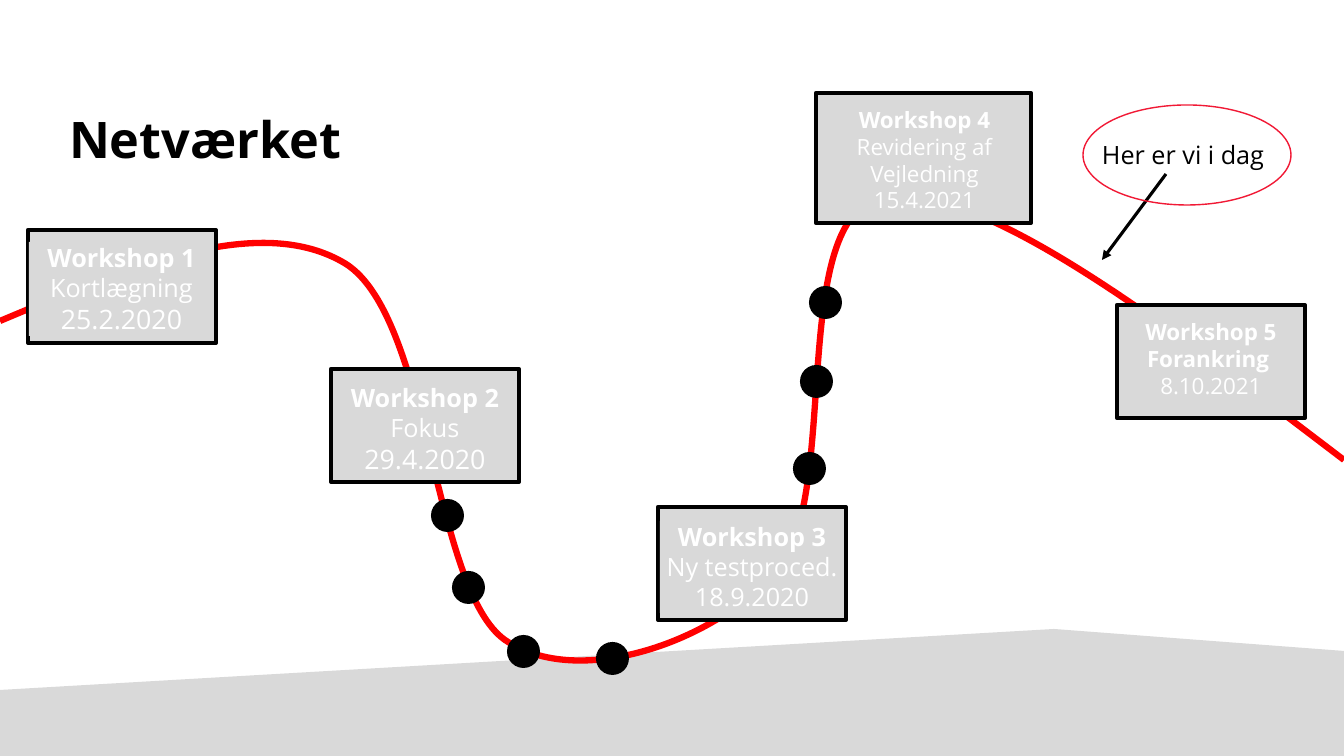
from lxml.etree import SubElement
from pptx import Presentation
from pptx.dml.color import RGBColor
from pptx.enum.shapes import MSO_CONNECTOR, MSO_SHAPE as SHAPE
from pptx.enum.text import MSO_ANCHOR, MSO_AUTO_SIZE, PP_ALIGN as ALIGN
from pptx.oxml.ns import qn
from pptx.util import Emu, Pt

PX = 12192000 / 1344
BLACK, WHITE, GREY, RED, ROSE = "000000", "FFFFFF", "D9D9D9", "FF0000", "F11935"


def px(length):
    return Emu(round(length * PX))


def paint(target, fill=None, line=None, width=0):
    """Colour a shape's fill and line and remove its shadow."""
    for part, colour in ((target.fill, fill), (target.line.fill, line)):
        if colour:
            part.solid()
            part.fore_color.rgb = RGBColor.from_string(colour)
        else:
            part.background()
    if line:
        target.line.width = Pt(width)
    target.shadow.inherit = False


deck = Presentation()
deck.slide_width, deck.slide_height = px(1344), px(756)
slide = deck.slides.add_slide(deck.slide_layouts[5])
shapes = slide.shapes

# Ground
ground_points = [(1054, 629), (1344, 651), (1344, 756), (0, 756)]
ground = shapes.build_freeform(0, px(690), scale=1)
ground.add_line_segments([(px(x), px(y)) for x, y in ground_points], close=True)
paint(ground.convert_to_shape(), GREY)

# Red route: the frame of the outline first, then its Bézier curves
ROUTE_TOP, ROUTE_BOTTOM = 196, 660
segments = [
    ("moveTo", [(0, 321)]),
    ("cubicBezTo", [(131, 266), (261, 212), (346, 264)]),
    ("cubicBezTo", [(430, 318), (433, 589), (505, 640)]),
    ("cubicBezTo", [(578, 690), (716, 642), (778, 569)]),
    ("cubicBezTo", [(841, 495), (787, 216), (882, 198)]),
    ("cubicBezTo", [(977, 179), (1160, 320), (1344, 460)]),
]
frame_outline = shapes.build_freeform(0, px(ROUTE_TOP), scale=1)
frame_outline.add_line_segments([(px(1344), px(ROUTE_BOTTOM))], close=False)
route = frame_outline.convert_to_shape()
outline = next(route._element.iter(qn("a:path")))
for straight in list(outline):
    outline.remove(straight)
for kind, points in segments:
    segment = SubElement(outline, qn("a:" + kind))
    for x, y in points:
        SubElement(segment, qn("a:pt"), x=str(px(x)), y=str(px(y - ROUTE_TOP)))
paint(route, line=RED, width=4.5)

# Title and note; lines are (text, size, bold)
title = shapes.title
title.left, title.top, title.width, title.height = map(px, (69, 108, 797, 61))
note = shapes.add_textbox(*map(px, (1102, 139, 172, 30)))
texts = [
    (title, BLACK, ALIGN.LEFT, [("Netværket", 36, True)]),
    (note, BLACK, ALIGN.LEFT, [("Her er vi i dag", 18, False)]),
]

# Workshops: framed box, text panel, lines
workshops = [
    ((28, 230, 188, 113), (29, 242, 185, 94),
     [("Workshop 1", 18, True), ("Kortlægning", 18, False), ("25.2.2020", 19.1, False)]),
    ((331, 369, 188, 113), (334, 382, 182, 94),
     [("Workshop 2", 18, True), ("Fokus", 18, False), ("29.4.2020", 19.1, False)]),
    ((658, 507, 188, 113), (660, 521, 184, 92),
     [("Workshop 3", 18, True), ("Ny testproced.", 18, False), ("18.9.2020", 18, False)]),
    ((816, 93, 215, 130), (822, 106, 205, 100),
     [("Workshop 4", 16, True), ("Revidering af", 16, False),
      ("Vejledning", 16, False), ("15.4.2021", 16, False)]),
    ((1117, 305, 188, 113), (1120, 318, 182, 82),
     [("Workshop 5", 16, True), ("Forankring ", 16, True), ("8.10.2021", 16, False)]),
]
for box, panel, lines in workshops:
    workshop = shapes.add_group_shape().shapes
    paint(workshop.add_shape(SHAPE.RECTANGLE, *map(px, box)), GREY, BLACK, 3)
    label = workshop.add_shape(SHAPE.RECTANGLE, *map(px, panel))
    paint(label, GREY)
    texts.append((label, WHITE, ALIGN.CENTER, lines))

# Arrow from the note to the route
arrow = shapes.add_connector(MSO_CONNECTOR.STRAIGHT, *map(px, (1166, 174, 1102, 260)))
arrow.line.width = Pt(2.25)
arrow.line.fill.solid()
arrow.line.fill.fore_color.rgb = RGBColor.from_string(BLACK)
SubElement(arrow.line._get_or_add_ln(), qn("a:tailEnd"), type="triangle")
SubElement(arrow._element.spPr, qn("a:effectLst"))

# Stops on the route
stops = [(431, 499), (452, 571), (507, 635), (596, 642),
         (793, 452), (800, 365), (809, 286)]
for left, top in stops:
    paint(shapes.add_shape(SHAPE.OVAL, px(left), px(top), px(33), px(33)), BLACK)

# Ring around the note
paint(shapes.add_shape(SHAPE.OVAL, *map(px, (1083, 105, 208, 100))), line=ROSE, width=1)

# All text
frame_format = {
    "margin_left": 0, "margin_top": 0, "margin_right": 0, "margin_bottom": 0,
    "word_wrap": True, "auto_size": MSO_AUTO_SIZE.NONE,
    "vertical_anchor": MSO_ANCHOR.TOP,
}
for holder, colour, align, lines in texts:
    frame = holder.text_frame
    for name, value in frame_format.items():
        setattr(frame, name, value)
    frame.text = "\n".join(text for text, size, bold in lines)
    for paragraph, (text, size, bold) in zip(frame.paragraphs, lines):
        paragraph.alignment = align
        font = paragraph.runs[0].font
        font_format = {"name": "Open Sans", "size": Pt(size), "bold": bold}
        for name, value in font_format.items():
            setattr(font, name, value)
        font.color.rgb = RGBColor.from_string(colour)

deck.save("out.pptx")
